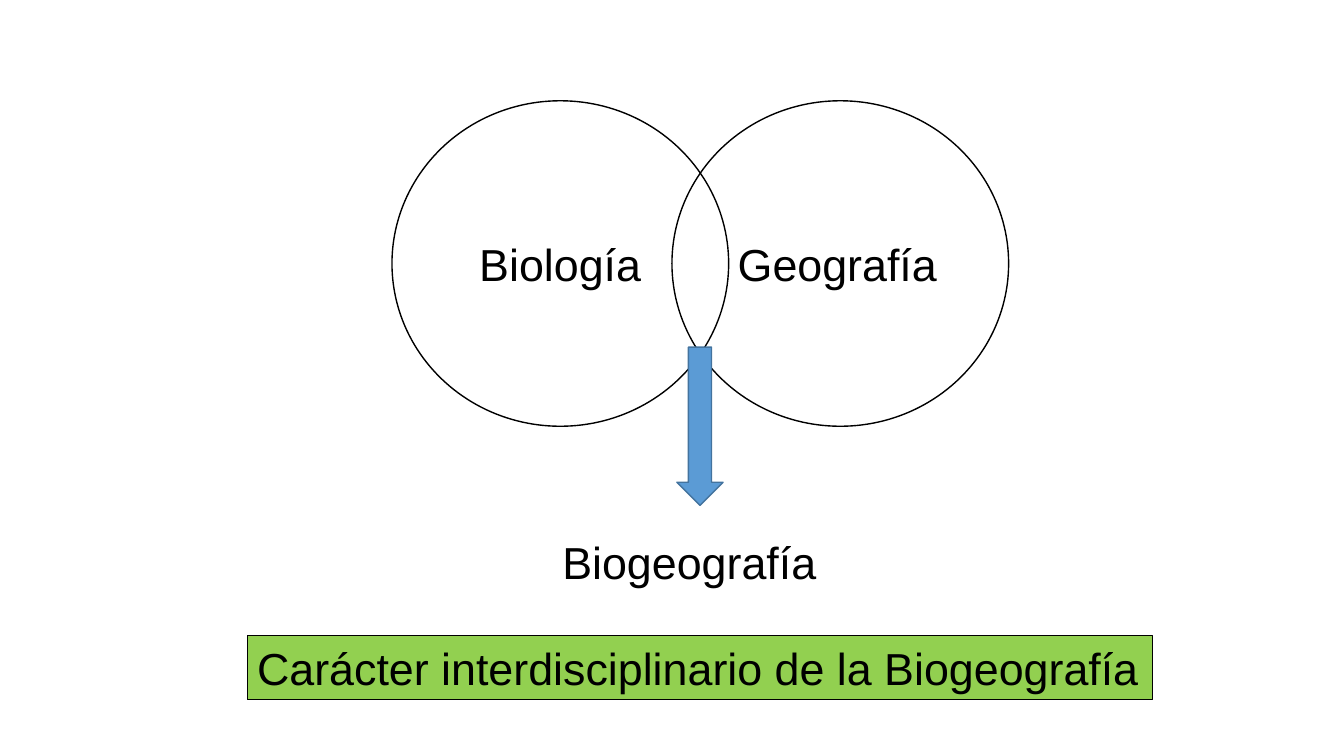
from dataclasses import dataclass

from pptx import Presentation
from pptx.dml.color import RGBColor
from pptx.enum.shapes import MSO_SHAPE
from pptx.enum.text import MSO_ANCHOR, PP_ALIGN
from pptx.util import Pt

CIRCLE = MSO_SHAPE.FLOWCHART_CONNECTOR
DOWN_ARROW = MSO_SHAPE.DOWN_ARROW
RECTANGLE = MSO_SHAPE.RECTANGLE
LEFT = PP_ALIGN.LEFT
CENTER = PP_ALIGN.CENTER
TOP = MSO_ANCHOR.TOP
MIDDLE = MSO_ANCHOR.MIDDLE


@dataclass(frozen=True)
class Theme:
    font: str = "Arial"
    text_size: float = 32
    ink: str = "000000"
    arrow_fill: str = "5B9BD5"
    arrow_line: str = "43739E"
    banner_fill: str = "92D050"


def write_text(shape, text, *, theme, align=CENTER, anchor=TOP, right_inset=7.2):
    frame = shape.text_frame
    frame.word_wrap = True
    frame.vertical_anchor = anchor
    frame.margin_right = Pt(right_inset)
    paragraph = frame.paragraphs[0]
    paragraph.alignment = align
    run = paragraph.add_run()
    run.text = text
    run.font.name = theme.font
    run.font.size = Pt(theme.text_size)
    run.font.color.rgb = RGBColor.from_string(theme.ink)


class SlideBuilder:
    def __init__(self, slide, theme):
        self.slide = slide
        self.theme = theme

    def shape(self, kind, box, line, line_width=1, fill=None):
        shape = self.slide.shapes.add_shape(kind, *map(Pt, box))
        shape.shadow.inherit = False
        if fill:
            shape.fill.solid()
            shape.fill.fore_color.rgb = RGBColor.from_string(fill)
        else:
            shape.fill.background()
        shape.line.color.rgb = RGBColor.from_string(line)
        shape.line.width = Pt(line_width)
        return shape

    def circle(self, text, box, **text_format):
        shape = self.shape(CIRCLE, box, self.theme.ink)
        write_text(shape, text, theme=self.theme, anchor=MIDDLE, **text_format)

    def arrow(self, box):
        self.shape(DOWN_ARROW, box, self.theme.arrow_line, fill=self.theme.arrow_fill)

    def label(self, text, box):
        write_text(self.slide.shapes.add_textbox(*map(Pt, box)), text, theme=self.theme)

    def banner(self, text, box):
        shape = self.shape(RECTANGLE, box, self.theme.ink, 0.75, self.theme.banner_fill)
        write_text(shape, text, theme=self.theme, align=LEFT)


def main():
    presentation = Presentation()
    presentation.slide_width = Pt(960)
    presentation.slide_height = Pt(540)
    blank_layout = presentation.slide_layouts[6]
    builder = SlideBuilder(presentation.slides.add_slide(blank_layout), Theme())

    builder.circle("Biología", (280, 72, 240.5, 232.5))
    builder.circle("Geografía", (480, 72, 240.5, 232.5), right_inset=11.2)
    builder.arrow((483.5, 248, 33, 113))
    builder.label("Biogeografía", (392.5, 378.5, 200, 46))
    builder.banner("Carácter interdisciplinario de la Biogeografía", (176.5, 454, 647, 46))

    presentation.save("out.pptx")


if __name__ == "__main__":
    main()
